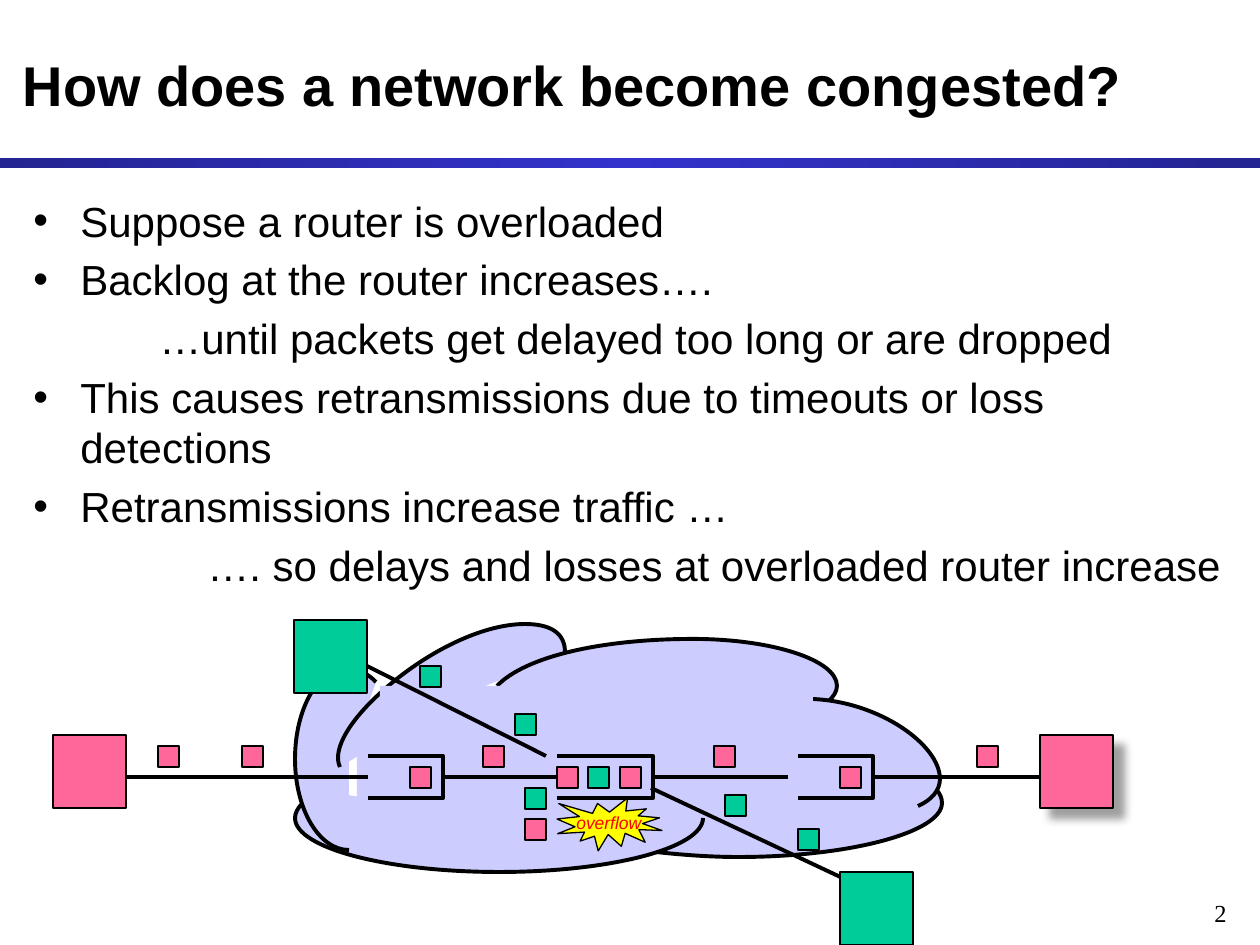
from typing import NamedTuple, Optional

from pptx import Presentation
from pptx.dml.color import RGBColor
from pptx.enum.shapes import MSO_CONNECTOR as Connector, MSO_SHAPE as Shape
from pptx.enum.text import MSO_ANCHOR as Anchor, MSO_AUTO_SIZE as AutoSize, PP_ALIGN as Align
from pptx.oxml import parse_xml
from pptx.oxml.ns import nsdecls
from pptx.util import Pt

SCALE = 914400 // 126
PINK, GREEN, CLOUD, BLACK = "FF6699", "00CC99", "CCCCFF", "000000"
HOST, PACKET = 73, 21
Point = tuple[int, int]


class Lobe(NamedTuple):
    start: Point
    curves: list[tuple[Point, Point, Point]]
    hub: Point


class Square(NamedTuple):
    x: int
    y: int
    color: str


class Item(NamedTuple):
    text: str
    margin: int = 47
    bullet: bool = True


LOBES = [
    Lobe((656, 852), [((683, 855), (711, 857), (738, 857)), ((851, 857), (942, 832), (942, 803)),
                      ((942, 794), (935, 785), (920, 777))], (738, 803)),
    Lobe((321, 791), [((304, 799), (295, 809), (295, 818)), ((295, 848), (387, 872), (499, 872)),
                      ((611, 872), (703, 848), (703, 818))], (499, 818)),
    Lobe((376, 682), [((367, 673), (357, 668), (347, 668)), ((318, 668), (295, 709), (295, 759)),
                      ((295, 809), (319, 850), (349, 850))], (349, 759)),
    Lobe((565, 654), [((566, 632), (549, 624), (525, 624)), ((480, 624), (420, 655), (375, 698)),
                      ((345, 727), (333, 752), (340, 767))], (450, 700)),
    Lobe((497, 686), [((525, 657), (600, 639), (693, 639)), ((772, 639), (837, 660), (837, 686)),
                      ((837, 692), (833, 697), (829, 701))], (667, 701)),
    Lobe((813, 699), [((880, 702), (940, 745), (940, 779)), ((940, 790), (932, 800), (918, 806))],
         (813, 770)),
]
LINKS = [((368, 777), (126, 777)), ((1040, 777), (872, 777)), ((557, 777), (441, 777)),
         ((788, 777), (651, 777)), ((546, 756), (357, 661)), ((851, 882), (651, 788))]
QUEUES = [(368, 443), (557, 653), (798, 873)]
HOSTS = [Square(53, 735, PINK), Square(1040, 735, PINK), Square(294, 620, GREEN),
         Square(840, 872, GREEN)]
PACKETS = [Square(x, y, color) for color, spots in {
    PINK: [(158, 746), (242, 746), (620, 767), (557, 767), (483, 746), (714, 746), (410, 767),
           (977, 746), (840, 767), (525, 819)],
    GREEN: [(420, 666), (515, 714), (588, 767), (725, 795), (798, 829), (525, 788)],
}.items() for x, y in spots]
ITEMS = [
    Item("Suppose a router is overloaded"),
    Item("Backlog at the router increases…."),
    Item("…until packets get delayed too long or are dropped", 126, False),
    Item("This causes retransmissions due to timeouts or loss detections"),
    Item("Retransmissions increase traffic …"),
    Item("…. so delays and losses at overloaded router increase", 174, False),
]


def px(value: int) -> int:
    """Turn pixels into EMU."""
    return value * SCALE


def rgb(color: str) -> RGBColor:
    """Turn a hex string into a colour."""
    return RGBColor.from_string(color)


def paint(shape, fill: Optional[str], line: Optional[str] = None, width: float = 1):
    """Set fill and outline and drop the theme shadow."""
    shape.shadow.inherit = False
    if fill:
        shape.fill.solid()
        shape.fill.fore_color.rgb = rgb(fill)
    else:
        shape.fill.background()
    if line:
        shape.line.color.rgb = rgb(line)
        shape.line.width = Pt(width)
    else:
        shape.line.fill.background()
    return shape


def add_preset(page, kind, x: int, y: int, wide: int, high: int):
    """Add a preset shape placed in pixels."""
    return page.shapes.add_shape(kind, px(x), px(y), px(wide), px(high))


def add_square(page, square: Square, size: int):
    """Draw a host or a packet."""
    box = add_preset(page, Shape.RECTANGLE, square.x, square.y, size, size)
    return paint(box, square.color, BLACK)


def add_path(page, points: list[Point], fill: Optional[str] = None):
    """Draw an open freeform through the points."""
    builder = page.shapes.build_freeform(*points[0], scale=SCALE)
    builder.add_line_segments(points[1:], close=False)
    return paint(builder.convert_to_shape(), fill, BLACK, 2.25)


def add_lobe(page, lobe: Lobe) -> None:
    """Draw one cloud lobe as a plain fill under an open curved outline."""
    points = [lobe.start, *(curve[-1] for curve in lobe.curves), lobe.hub]
    shape = add_path(page, points, CLOUD)
    left, top = (min(axis) for axis in zip(*points))
    right, bottom = (max(axis) for axis in zip(*points))

    def command(name: str, *corners: Point) -> str:
        """Write one path command."""
        marks = "".join(f'<a:pt x="{x - left}" y="{y - top}"/>' for x, y in corners)
        return f"<a:{name}>{marks}</a:{name}>"

    arc = command("moveTo", lobe.start)
    arc += "".join(command("cubicBezTo", *curve) for curve in lobe.curves)
    wedge = arc + command("lnTo", lobe.hub) + "<a:close/>"
    size = f'w="{right - left}" h="{bottom - top}"'
    old = shape._element.spPr.find(".//{*}pathLst")
    old.getparent().replace(old, parse_xml(
        f'<a:pathLst {nsdecls("a")}><a:path {size} fill="none">{arc}</a:path>'
        f'<a:path {size} stroke="0">{wedge}</a:path></a:pathLst>'))


def add_link(page, start: Point, end: Point) -> None:
    """Draw a network link."""
    link = page.shapes.add_connector(Connector.STRAIGHT, *map(px, start + end))
    link.line.color.rgb = rgb(BLACK)
    link.line.width = Pt(2.25)
    link._element.spPr.append(parse_xml(f"<a:effectLst {nsdecls('a')}/>"))


def style(para, size: int, color: str = BLACK, font: str = "Arial", bold: bool = False,
          italic: bool = False, align=Align.LEFT) -> None:
    """Format a paragraph and its runs."""
    para.alignment = align
    for span in para.runs:
        span.font.name, span.font.size = font, Pt(size)
        span.font.bold, span.font.italic = bold, italic
        span.font.color.rgb = rgb(color)


def add_title(page) -> None:
    """Fill and place the title placeholder."""
    title = page.shapes.title
    title.left, title.top, title.width, title.height = map(px, (10, 21, 1239, 126))
    frame = title.text_frame
    frame.text = "How does a network become congested?"
    frame.auto_size, frame.vertical_anchor = AutoSize.NONE, Anchor.MIDDLE
    style(frame.paragraphs[0], 32, bold=True)


def add_bar(page) -> None:
    """Draw the gradient bar below the title."""
    bar = paint(add_preset(page, Shape.RECTANGLE, 0, 158, 1260, 10), "242492")
    stops = "".join(f'<a:gs pos="{place}"><a:srgbClr val="{color}"/></a:gs>' for place, color in
                    ((0, "242492"), (50000, "3333CC"), (100000, "242492")))
    properties = bar._element.spPr
    properties.replace(properties.find("{*}solidFill"), parse_xml(
        f'<a:gradFill {nsdecls("a")}><a:gsLst>{stops}</a:gsLst><a:lin ang="0"/></a:gradFill>'))


def add_body(page) -> None:
    """Write the list of points."""
    frame = page.shapes.add_textbox(*map(px, (21, 189, 1229, 431))).text_frame
    frame.word_wrap = True
    for index, item in enumerate(ITEMS):
        para = frame.add_paragraph() if index else frame.paragraphs[0]
        para.text = item.text
        style(para, 24)
        para.space_before = Pt(4.8)
        properties = para._p.get_or_add_pPr()
        properties.set("marL", str(px(item.margin)))
        properties.set("indent", str(px(-47 if item.bullet else 0)))
        if item.bullet:
            properties.append(parse_xml(f'<a:buFont {nsdecls("a")} typeface="Arial"/>'))
            properties.append(parse_xml(f'<a:buChar {nsdecls("a")} char="•"/>'))


def add_network(page) -> None:
    """Draw the cloud, links, queues, hosts and packets."""
    paint(add_preset(page, Shape.RECTANGLE, 357, 733, 528, 100), CLOUD)
    for lobe in LOBES:
        add_lobe(page, lobe)
    paint(add_preset(page, Shape.RECTANGLE, 380, 686, 433, 100), CLOUD)
    for start, end in LINKS:
        add_link(page, start, end)
    for left, right in QUEUES:
        add_path(page, [(left, 798), (right, 798), (right, 756), (left, 756)])
    hosts = [add_square(page, host, HOST) for host in HOSTS]
    hosts[1]._element.spPr.find("{*}effectLst").append(parse_xml(
        f'<a:outerShdw {nsdecls("a")} blurRad="63500" dist="107950" dir="2700000">'
        '<a:srgbClr val="808080"><a:alpha val="75000"/></a:srgbClr></a:outerShdw>'))
    for packet in PACKETS:
        add_square(page, packet, PACKET)


def add_overflow(page) -> None:
    """Draw the overflow burst."""
    burst = paint(add_preset(page, Shape.EXPLOSION1, 557, 798, 105, 53), "FFFF00", BLACK, 0.75)
    frame = burst.text_frame
    frame.text = "overflow"
    frame.word_wrap, frame.vertical_anchor = False, Anchor.MIDDLE
    style(frame.paragraphs[0], 10, "FF0000", italic=True, align=Align.CENTER)


def add_number(page) -> None:
    """Write the page number."""
    frame = page.shapes.add_textbox(*map(px, (977, 892, 262, 32))).text_frame
    frame.word_wrap = True
    frame.text = "2"
    style(frame.paragraphs[0], 14, font="Times New Roman", align=Align.RIGHT)


def main() -> None:
    """Build the slide and save it."""
    deck = Presentation()
    deck.slide_width, deck.slide_height = px(1260), px(945)
    page = deck.slides.add_slide(deck.slide_layouts[5])
    for draw in (add_bar, add_title, add_body, add_network, add_overflow, add_number):
        draw(page)
    deck.save("out.pptx")


if __name__ == "__main__":
    main()
